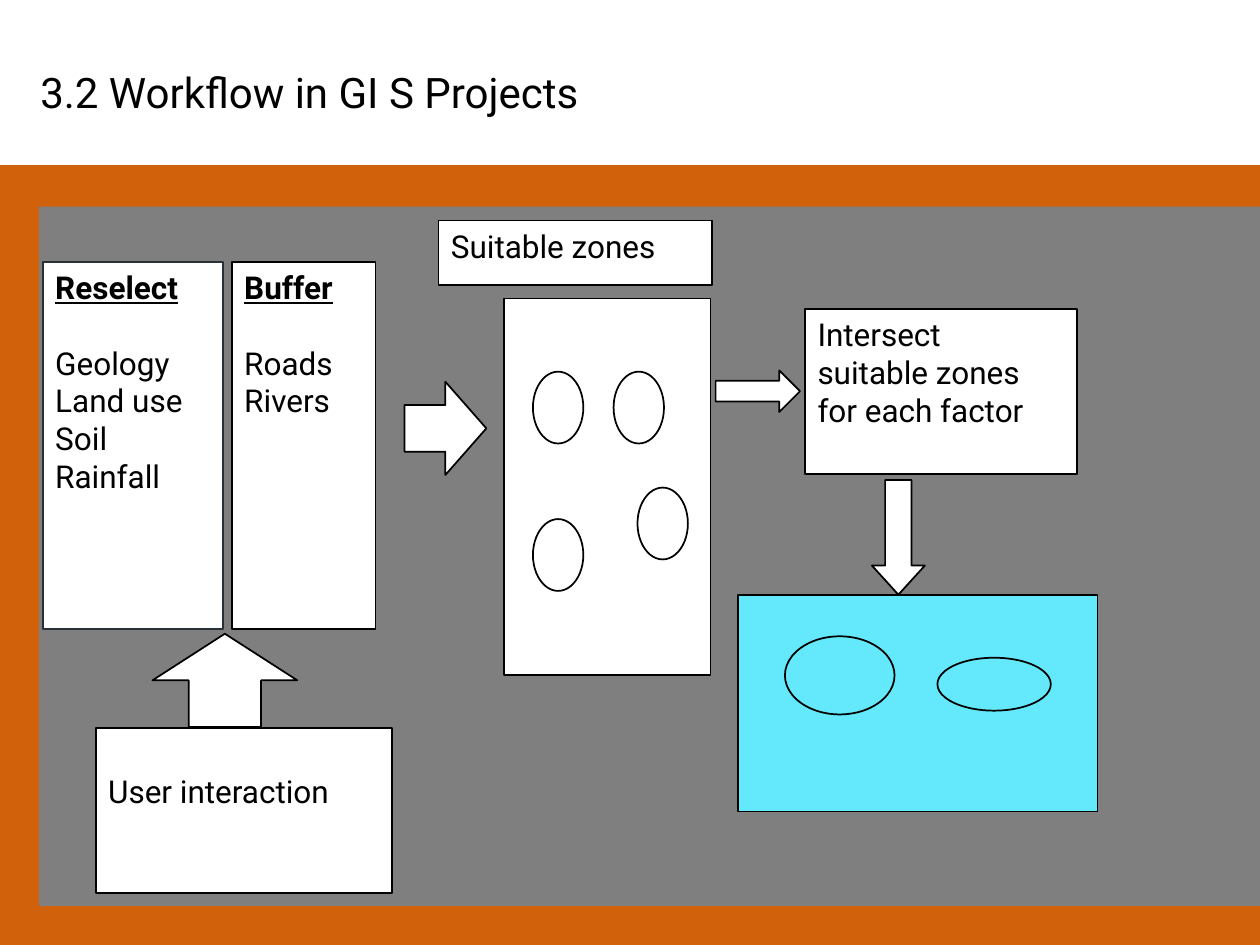
from pptx import Presentation
from pptx.dml.color import RGBColor
from pptx.enum.shapes import MSO_SHAPE as Shape
from pptx.enum.text import MSO_ANCHOR as Anchor, PP_ALIGN as Align
from pptx.util import Inches, Pt

FONT = "Roboto"
BLACK, WHITE, CYAN = "000000", "FFFFFF", "63E9FB"


def add_shape(kind, left, top, width, height, fill=WHITE, line=BLACK):
    shape = slide.shapes.add_shape(
        kind, Inches(left), Inches(top), Inches(width), Inches(height))
    shape.shadow.inherit = False
    shape.fill.solid()
    shape.fill.fore_color.rgb = RGBColor.from_string(fill)
    if line:
        shape.line.color.rgb = RGBColor.from_string(line)
        shape.line.width = Pt(1)
    else:
        shape.line.fill.background()
    return shape


def write_text(shape, text, size, anchor=Anchor.TOP):
    text_frame = shape.text_frame
    text_frame.text = text
    text_frame.word_wrap = True
    text_frame.vertical_anchor = anchor
    for paragraph in text_frame.paragraphs:
        paragraph.alignment = Align.LEFT
        for run in paragraph.runs:
            run.font.name = FONT
            run.font.size = Pt(size)
            run.font.color.rgb = RGBColor.from_string(BLACK)
    return text_frame


presentation = Presentation()
presentation.slide_width = Inches(10)
presentation.slide_height = Inches(7.5)
slide = presentation.slides.add_slide(presentation.slide_layouts[5])

# Title
title = slide.shapes.title
title.left, title.top = Inches(0.22), Inches(0.35)
title.width, title.height = Inches(8.67), Inches(0.75)
write_text(title, "3.2 Workflow in GI S Projects", 24, Anchor.MIDDLE)

# Orange frame and grey panel
add_shape(Shape.RECTANGLE, 0, 1.31, 10, 6.22, "D2610C", None)
add_shape(Shape.RECTANGLE, 0.31, 1.64, 9.69, 5.55, "7F7F7F", None)

# Suitable zones map
add_shape(Shape.RECTANGLE, 4, 2.37, 1.64, 2.99)
for left, top in [(4.23, 2.95), (4.87, 2.95), (5.06, 3.87), (4.23, 4.12)]:
    add_shape(Shape.OVAL, left, top, 0.4, 0.57)

# User interaction, one line below the top of its box
interaction = add_shape(Shape.RECTANGLE, 0.76, 5.78, 2.35, 1.31)
write_text(interaction, "User interaction", 18).margin_top = Inches(0.35)

# Lists with an underlined heading
for left, width, line, heading, items in [
    (0.34, 1.43, "283138", "Reselect", ["Geology", "Land use", "Soil", "Rainfall"]),
    (1.84, 1.14, BLACK, "Buffer", ["Roads", "Rivers"]),
]:
    box = add_shape(Shape.RECTANGLE, left, 2.08, width, 2.91, line=line)
    text_frame = write_text(box, "\n".join([heading] + items), 18)
    heading_font = text_frame.paragraphs[0].runs[0].font
    heading_font.bold = True
    heading_font.underline = True
    text_frame.paragraphs[1].space_before = Pt(21.5)

# Plain labels
for left, top, width, height, text in [
    (6.39, 2.45, 2.16, 1.31, "Intersect\nsuitable zones\nfor each factor"),
    (3.48, 1.75, 2.17, 0.51, "Suitable zones"),
]:
    write_text(add_shape(Shape.RECTANGLE, left, top, width, height), text, 18)

# Resulting map
add_shape(Shape.RECTANGLE, 5.86, 4.72, 2.85, 1.72, CYAN)
add_shape(Shape.OVAL, 6.23, 5.05, 0.87, 0.62, CYAN)
add_shape(Shape.OVAL, 7.44, 5.22, 0.9, 0.42, CYAN)

# Block arrows between the steps
for kind, left, top, width, height, head in [
    (Shape.UP_ARROW, 1.21, 5.03, 1.15, 0.74, 0.5),
    (Shape.RIGHT_ARROW, 3.21, 3.03, 0.65, 0.74, 0.5),
    (Shape.RIGHT_ARROW, 5.68, 2.94, 0.67, 0.33, 0.5),
    (Shape.DOWN_ARROW, 6.92, 3.81, 0.42, 0.91, 0.55),
]:
    arrow = add_shape(kind, left, top, width, height)
    arrow.adjustments[1] = head

presentation.save("out.pptx")
